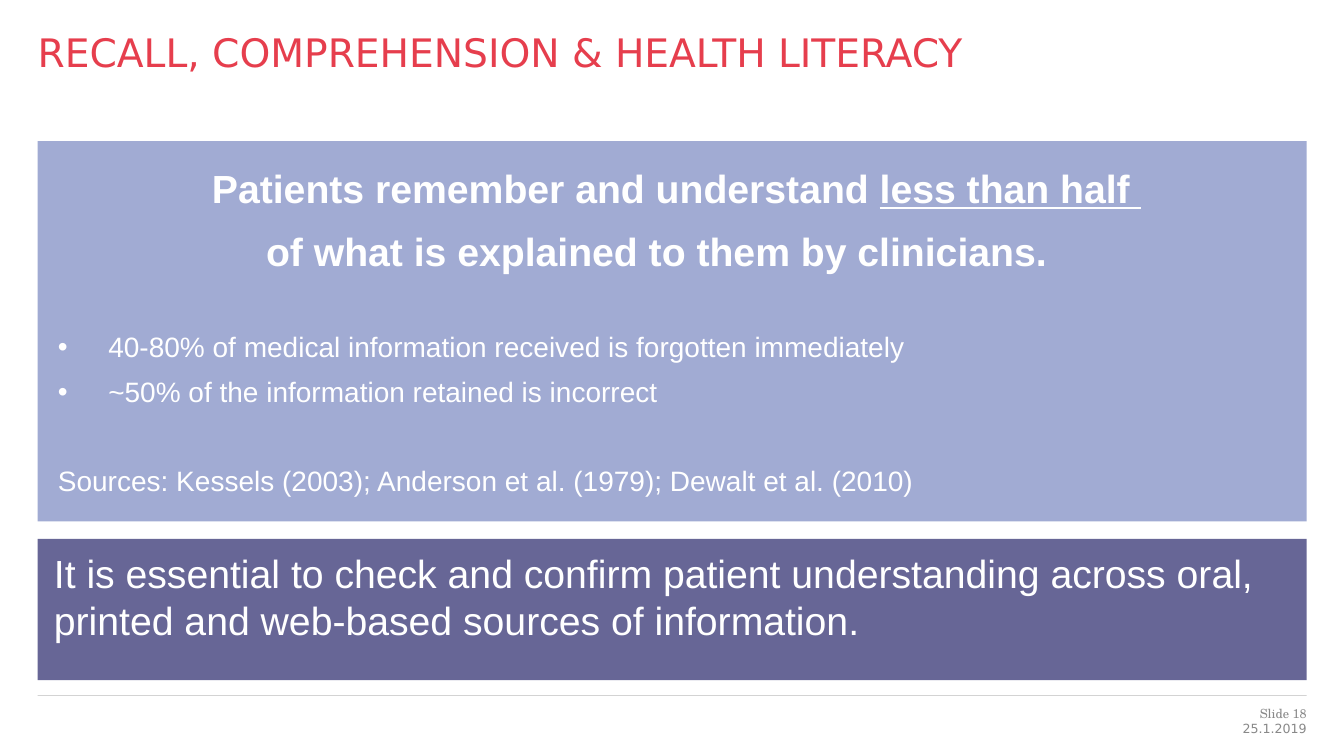
import pptx
import pptx.dml.color
import pptx.enum.shapes
import pptx.enum.text
import pptx.oxml.ns
import pptx.util
from lxml import etree

Cm, Pt = pptx.util.Cm, pptx.util.Pt
RGBColor = pptx.dml.color.RGBColor
ALIGN = pptx.enum.text.PP_ALIGN
qn = pptx.oxml.ns.qn

RED = RGBColor(0xE6, 0x3E, 0x4D)
LAVENDER = RGBColor(0xA1, 0xAB, 0xD3)
VIOLET = RGBColor(0x67, 0x66, 0x96)
WHITE = RGBColor(0xFF, 0xFF, 0xFF)
GREY = RGBColor(0x89, 0x89, 0x89)
RULE = RGBColor(0x26, 0x26, 0x26)

LEFT, WIDTH = Cm(0.95), Cm(31.98)


def set_frame(shape, insets):
    frame = shape.text_frame
    frame.word_wrap = True
    frame.vertical_anchor = pptx.enum.text.MSO_ANCHOR.TOP
    frame.margin_left, frame.margin_top, frame.margin_right, frame.margin_bottom = insets
    return frame


def add_run(paragraph, text, size, color, font="Arial", bold=False, underline=False):
    run = paragraph.add_run()
    run.text = text
    run.font.name, run.font.size = font, Pt(size)
    run.font.bold, run.font.underline = bold, underline
    run.font.color.rgb = color


def add_label(slide, box, text, size, color, font, align):
    frame = set_frame(slide.shapes.add_textbox(*box), [0] * 4)
    paragraph = frame.paragraphs[0]
    paragraph.alignment = align
    add_run(paragraph, text, size, color, font)


def add_panel(slide, box, fill, insets):
    panel = slide.shapes.add_shape(pptx.enum.shapes.MSO_SHAPE.RECTANGLE, *box)
    panel.shadow.inherit = False
    panel.fill.solid()
    panel.fill.fore_color.rgb = fill
    panel.line.fill.background()
    return set_frame(panel, insets)


def add_bullet(paragraph):
    properties = paragraph._p.get_or_add_pPr()
    properties.set("marL", str(Cm(1.27)))
    properties.set("indent", str(-Cm(1.27)))
    color = etree.SubElement(properties, qn("a:buClr"))
    etree.SubElement(color, qn("a:srgbClr")).set("val", str(WHITE))
    etree.SubElement(properties, qn("a:buFont")).set("typeface", "Arial")
    etree.SubElement(properties, qn("a:buChar")).set("char", "•")


def add_findings(slide, box):
    frame = add_panel(slide, box, LAVENDER, [Cm(0.51), Cm(0.4), Cm(0.3), Cm(0.3)])

    # Headline over two lines
    headline = frame.paragraphs[0]
    add_run(headline, "Patients remember and understand ", 28, WHITE, bold=True)
    add_run(headline, "less than half ", 28, WHITE, bold=True, underline=True)
    headline_end = frame.add_paragraph()
    headline_end._p.get_or_add_pPr().set("marR", str(Cm(1)))
    headline_end.space_before = Pt(6.4)
    add_run(headline_end, "of what is explained to them by clinicians.", 28, WHITE, bold=True)
    for paragraph in (headline, headline_end):
        paragraph.alignment = ALIGN.CENTER
        paragraph.line_spacing = 1.15

    # Evidence and its sources
    for text, space, bulleted in (
        ("40-80% of medical information received is forgotten immediately", 36, True),
        ("~50% of the information retained is incorrect", 4.6, True),
        ("Sources: Kessels (2003); Anderson et al. (1979); Dewalt et al. (2010)", 36, False),
    ):
        paragraph = frame.add_paragraph()
        if bulleted:
            add_bullet(paragraph)
        paragraph.alignment = ALIGN.JUSTIFY
        paragraph.line_spacing = 1.15
        paragraph.space_before = Pt(space)
        add_run(paragraph, text, 20, WHITE)


def add_conclusion(slide, box):
    frame = add_panel(slide, box, VIOLET, [Cm(0.41), Cm(0.25), Cm(0.2), Cm(0.2)])
    paragraph = frame.paragraphs[0]
    paragraph.alignment = ALIGN.LEFT
    add_run(paragraph, "It is essential to check and confirm patient understanding across "
            "oral, printed and web-based sources of information.", 28, WHITE)


def add_footer(slide, left, top, width):
    # Hairline above the footer
    rule = slide.shapes.add_connector(
        pptx.enum.shapes.MSO_CONNECTOR.STRAIGHT, left, top, left + width, top)
    rule.line.width = Pt(0.25)
    rule.line.color.rgb = RULE
    shade = rule.line.fill._xPr.find(".//" + qn("a:srgbClr"))
    etree.SubElement(shade, qn("a:alpha")).set("val", "31000")
    etree.SubElement(rule._element.spPr, qn("a:effectLst"))

    # Slide number and date, flush right
    label_width = Cm(4.7)
    for text, offset, font in (("Slide 18", Cm(0.25), "TeX Gyre Schola"),
                               ("25.1.2019", Cm(0.64), "DejaVu Sans")):
        box = (left + width - label_width, top + offset, label_width, Cm(0.4))
        add_label(slide, box, text, 9, GREY, font, ALIGN.RIGHT)


def main():
    presentation = pptx.Presentation()
    presentation.slide_width, presentation.slide_height = Cm(33.87), Cm(19.05)
    slide = presentation.slides.add_slide(presentation.slide_layouts[6])

    add_label(slide, (LEFT, Cm(0.71), WIDTH, Cm(2.39)),
              "RECALL, COMPREHENSION & HEALTH LITERACY", 28, RED, "DejaVu Sans", ALIGN.LEFT)
    add_findings(slide, (LEFT, Cm(3.56), WIDTH, Cm(9.58)))
    add_conclusion(slide, (LEFT, Cm(13.58), WIDTH, Cm(3.56)))
    add_footer(slide, LEFT, Cm(17.53), WIDTH)
    presentation.save("out.pptx")


if __name__ == "__main__":
    main()
